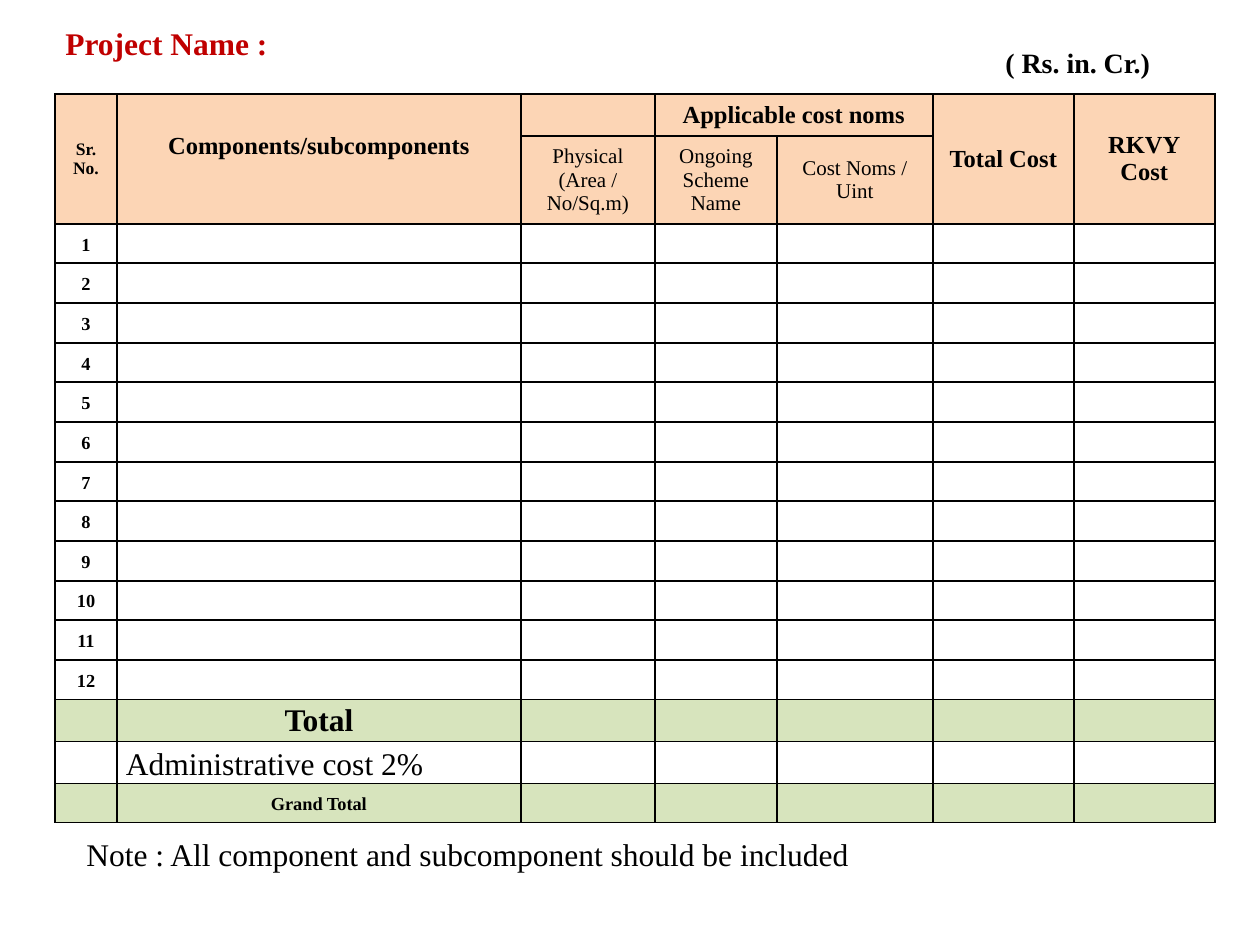
"""Build a project cost sheet with a bordered table and its captions."""
import dataclasses

import lxml.etree
import pptx
import pptx.dml.color
import pptx.enum.text
import pptx.oxml.ns
import pptx.util

SCALE = 914400 // 126
FONT = "Times New Roman"
HUES = {"black": "000000", "red": "C00000", "peach": "FCD5B5", "green": "D7E4BD"}
COLS = [62, 404, 134, 122, 156, 141, 141]
ITEMS = 12
HEAD = 2
TOTAL = HEAD + ITEMS
ROWS = [42, 88] + [39, 40, 40] * (ITEMS // 3) + [42, 42, 39]
BANDS = {0: "peach", 1: "peach", TOTAL: "green", TOTAL + 2: "green"}
SLIM = (9, 0, 9, 0)


@dataclasses.dataclass
class Label:
    row: int
    col: int
    text: str
    size: float = 14
    bold: bool = True
    align: str = "CENTER"
    lead: float = 1
    pads: tuple[int, int, int, int] = (13, 6, 13, 6)
    span: tuple[int, int] = (1, 1)


@dataclasses.dataclass
class Note:
    text: str
    left: int
    top: int
    width: int
    height: int
    size: float = 18
    bold: bool = True
    hue: str = "black"


LABELS = [
    Label(0, 0, "Sr. No.", size=10, span=(2, 1)),
    Label(0, 1, "Components/subcomponents", pads=(13, 6, 13, 32), span=(2, 1)),
    Label(0, 3, "Applicable cost noms", span=(1, 2)),
    Label(0, 5, "Total Cost", span=(2, 1)),
    Label(0, 6, "RKVY\nCost", span=(2, 1)),
    Label(1, 2, "Physical (Area / No/Sq.m)", size=12, bold=False),
    Label(1, 3, "Ongoing Scheme Name", size=12, bold=False),
    Label(1, 4, "Cost Noms / Uint", size=12, bold=False),
    *(Label(HEAD + i, 0, str(i + 1), size=10.5, lead=1.15, pads=SLIM)
      for i in range(ITEMS)),
    Label(TOTAL, 1, "Total", size=18, pads=SLIM),
    Label(TOTAL + 1, 1, "Administrative cost 2%", size=18, bold=False,
          align="LEFT", lead=1.15, pads=SLIM),
    Label(TOTAL + 2, 1, "Grand Total", size=10.5, lead=1.15, pads=SLIM),
]

NOTES = [
    Note("Project Name :", 53, 18, 1176, 50, hue="red"),
    Note("( Rs. in. Cr.)", 993, 39, 253, 47, size=16),
    Note("Note : All component and subcomponent should be included",
         74, 829, 1131, 50, bold=False),
]


def px(count: int) -> int:
    """Turn pixels into EMU."""
    return pptx.util.Emu(count * SCALE)


def tint(name: str) -> pptx.dml.color.RGBColor:
    """Look up a named colour."""
    return pptx.dml.color.RGBColor.from_string(HUES[name])


def write(frame, text: str, *, size: float, bold: bool, hue: str = "black",
          align: str = "LEFT", lead: float = 1) -> None:
    """Write text into a frame, one paragraph for each line."""
    frame.word_wrap = True
    for i, line in enumerate(text.split("\n")):
        para = frame.add_paragraph() if i else frame.paragraphs[0]
        para.alignment = pptx.enum.text.PP_ALIGN[align]
        para.line_spacing = lead
        run = para.add_run()
        run.text = line
        run.font.name = FONT
        run.font.size = pptx.util.Pt(size)
        run.font.bold = bold
        run.font.color.rgb = tint(hue)


def rule(cell) -> None:
    """Draw a thin black line on all four sides of a cell."""
    qn = pptx.oxml.ns.qn
    props = cell._tc.get_or_add_tcPr()
    for i, side in enumerate("LRTB"):
        line = lxml.etree.Element(qn(f"a:ln{side}"), w=str(pptx.util.Pt(1)))
        fill = lxml.etree.SubElement(line, qn("a:solidFill"))
        lxml.etree.SubElement(fill, qn("a:srgbClr"), val=HUES["black"])
        props.insert(i, line)


def dress(cell, band: str | None) -> None:
    """Give a cell its fill, borders and small default text."""
    if band:
        cell.fill.solid()
        cell.fill.fore_color.rgb = tint(band)
    else:
        cell.fill.background()
    rule(cell)
    cell.vertical_anchor = pptx.enum.text.MSO_ANCHOR.MIDDLE
    end = cell.text_frame.paragraphs[0]._p.get_or_add_endParaRPr()
    end.set("sz", "1000")


def put(table, label: Label) -> None:
    """Place a label in its cell, merged over its span."""
    cell = table.cell(label.row, label.col)
    high, wide = label.span
    if label.span != (1, 1):
        cell.merge(table.cell(label.row + high - 1, label.col + wide - 1))
    (cell.margin_left, cell.margin_top,
     cell.margin_right, cell.margin_bottom) = map(px, label.pads)
    write(cell.text_frame, label.text, size=label.size, bold=label.bold,
          align=label.align, lead=label.lead)


def grid(slide) -> None:
    """Add the cost table."""
    table = slide.shapes.add_table(len(ROWS), len(COLS), px(55), px(94),
                                   px(sum(COLS)), px(sum(ROWS))).table
    table.first_row = table.horz_banding = False
    for col, width in zip(table.columns, COLS):
        col.width = px(width)
    for i, (row, height) in enumerate(zip(table.rows, ROWS)):
        row.height = px(height)
        for cell in row.cells:
            dress(cell, BANDS.get(i))
    for label in LABELS:
        put(table, label)


def post(slide, note: Note) -> None:
    """Add a caption as a text box."""
    box = slide.shapes.add_textbox(px(note.left), px(note.top),
                                   px(note.width), px(note.height))
    write(box.text_frame, note.text, size=note.size, bold=note.bold, hue=note.hue)


def main() -> None:
    """Build and save the slide."""
    deck = pptx.Presentation()
    deck.slide_width, deck.slide_height = px(1260), px(945)
    slide = deck.slides.add_slide(deck.slide_layouts[6])
    grid(slide)
    for note in NOTES:
        post(slide, note)
    deck.save("out.pptx")


if __name__ == "__main__":
    main()
